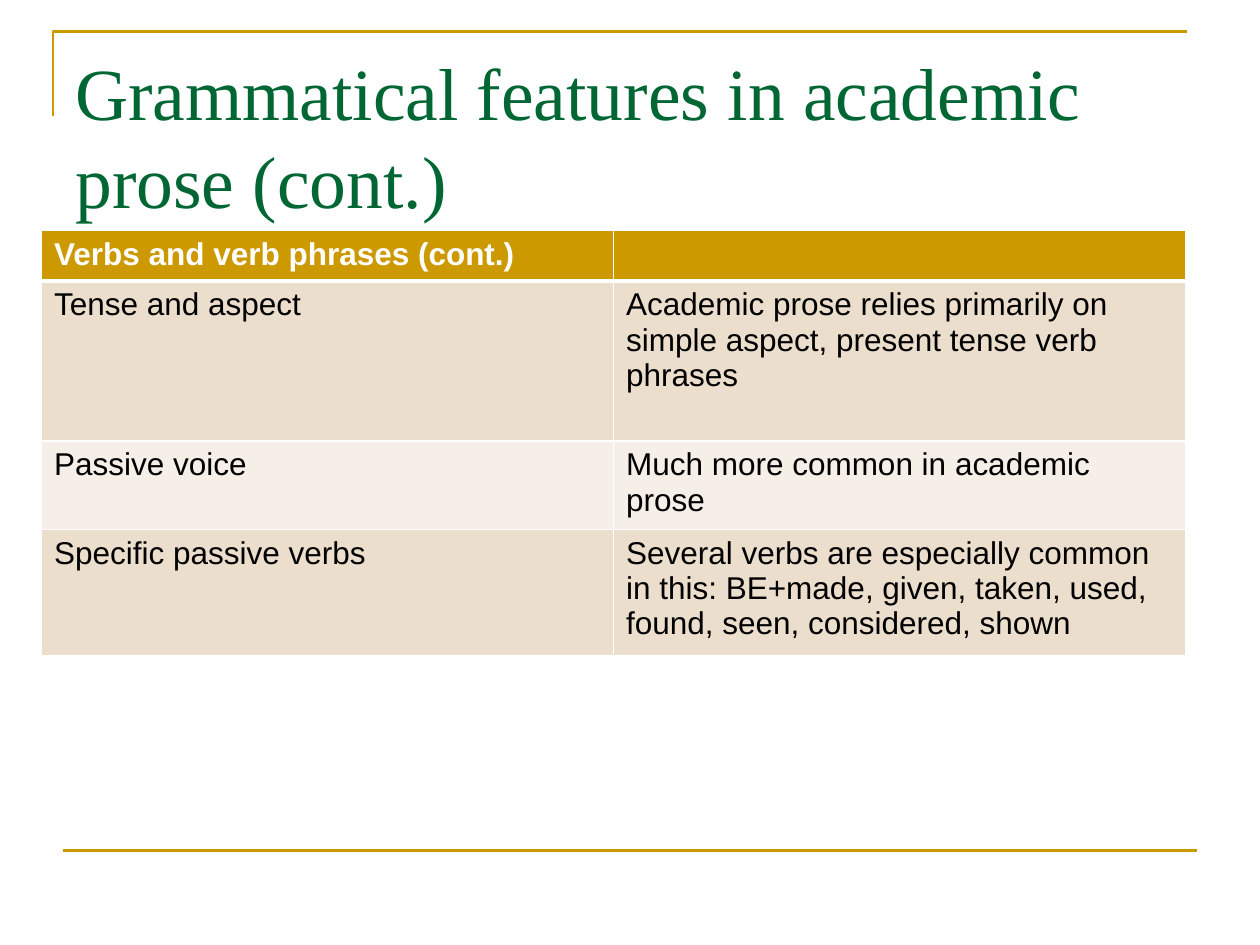
import pptx
import pptx.util
import pptx.dml.color
import pptx.enum.shapes
import pptx.enum.text
import pptx.oxml
import pptx.oxml.ns
from pptx.util import Inches

COLORS = {
    "gold": "CC9900", "green": "006633", "white": "FFFFFF",
    "black": "000000", "band": "ECDECC", "light": "F6EFE7",
}
TITLE = "Grammatical features in academic prose (cont.)"
ROWS = [
    ("Verbs and verb phrases (cont.)", ""),
    ("Tense and aspect",
     "Academic prose relies primarily on simple aspect, present tense verb phrases"),
    ("Passive voice", "Much more common in academic prose"),
    ("Specific passive verbs",
     "Several verbs are especially common in this: BE+made, given, taken, used, "
     "found, seen, considered, shown"),
]
ROW_HEIGHTS = [0.37, 1.27, 0.66, 0.93]
COLUMN_WIDTH = 4.54


def color(name):
    return pptx.dml.color.RGBColor.from_string(COLORS[name])


def add_span(para, text, size, font, tint, bold=False):
    span = para.add_run()
    span.text = text
    span.font.size = pptx.util.Pt(size)
    span.font.name = font
    span.font.bold = bold
    span.font.color.rgb = color(tint)


def style_line(shape):
    shape.line.color.rgb = color("gold")
    shape.line.width = pptx.util.Pt(1.5)


def add_borders(cell, bottom, top):
    properties = cell._tc.get_or_add_tcPr()
    widths = {"lnL": 1, "lnR": 1, "lnT": top, "lnB": bottom}
    for position, (tag, points) in enumerate(widths.items()):
        border = pptx.oxml.parse_xml(
            f'<a:{tag} {pptx.oxml.ns.nsdecls("a")} w="{pptx.util.Pt(points)}">'
            f'<a:solidFill><a:srgbClr val="{COLORS["white"]}"/></a:solidFill></a:{tag}>')
        properties.insert(position, border)


deck = pptx.Presentation()
deck.slide_width, deck.slide_height = Inches(10), Inches(7.5)
page = deck.slides.add_slide(deck.slide_layouts[6])

# Corner rule at the top
builder = page.shapes.build_freeform(Inches(0.42), Inches(0.92))
builder.add_line_segments(
    [(Inches(0.42), Inches(0.25)), (Inches(9.42), Inches(0.25))], close=False)
corner = builder.convert_to_shape()
corner.shadow.inherit = False
corner.fill.background()
style_line(corner)

# Rule at the foot
rule = page.shapes.add_connector(
    pptx.enum.shapes.MSO_CONNECTOR.STRAIGHT,
    Inches(0.5), Inches(6.75), Inches(9.5), Inches(6.75))
style_line(rule)
rule._element.spPr.append(
    pptx.oxml.parse_xml(f'<a:effectLst {pptx.oxml.ns.nsdecls("a")}/>'))

# Title
box = page.shapes.add_textbox(Inches(0.5), Inches(0.3), Inches(9), Inches(1.25))
frame = box.text_frame
frame.word_wrap = True
frame.vertical_anchor = pptx.enum.text.MSO_ANCHOR.TOP
frame.margin_top = Inches(0.08)
frame.paragraphs[0].line_spacing = pptx.util.Pt(50)
add_span(frame.paragraphs[0], TITLE, 42, "Times New Roman", "green")

# Table of features
table = page.shapes.add_table(
    len(ROWS), 2, Inches(0.33), Inches(1.83),
    Inches(2 * COLUMN_WIDTH), Inches(sum(ROW_HEIGHTS))).table
for column in table.columns:
    column.width = Inches(COLUMN_WIDTH)
for r, (texts, height) in enumerate(zip(ROWS, ROW_HEIGHTS)):
    table.rows[r].height = Inches(height)
    header = r == 0
    fill = "gold" if header else "band" if r % 2 else "light"
    for c, text in enumerate(texts):
        cell = table.cell(r, c)
        cell.fill.solid()
        cell.fill.fore_color.rgb = color(fill)
        add_borders(cell, bottom=3 if header else 1, top=3 if r == 1 else 1)
        if text:
            add_span(cell.text_frame.paragraphs[0], text, 18, "Arial",
                     "white" if header else "black", bold=header)

deck.save("out.pptx")
